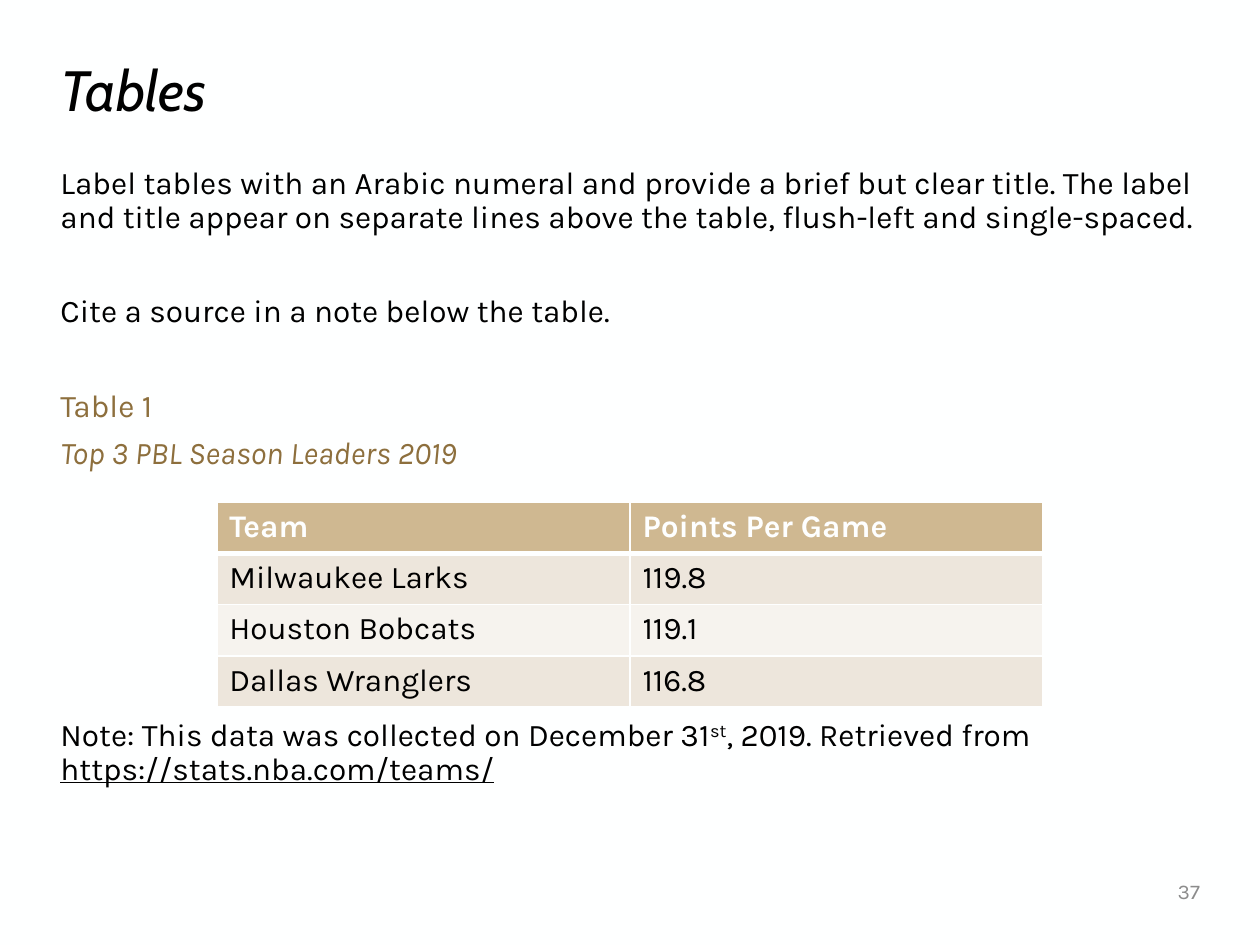
from lxml.etree import SubElement
from pptx import Presentation
from pptx.dml.color import RGBColor
from pptx.enum.text import MSO_ANCHOR, PP_ALIGN
from pptx.oxml.ns import qn
from pptx.util import Cm, Pt

INK = {"back": "FEFFFF", "text": "000000", "gold": "8D6F3D", "grey": "8C8C8C",
       "head": "CFB891", "odd": "EDE6DC", "even": "F6F3EE"}

TITLE = [(0, [("Tables", {"font": "Cabin", "size": 32.4, "italic": True})])]
BODY = [
    (0, [("Label tables with an Arabic numeral and provide a brief but clear title. "
          "The label and title appear on separate lines above the table, "
          "flush-left and single-spaced.", {})]),
    (34.4, [("Cite a source in a note below the table.", {})]),
    (34.4, [("Table 1", {"ink": "gold"})]),
    (7.5, [("Top 3 PBL Season Leaders 2019", {"ink": "gold", "italic": True})]),
    (142, [("Note: This data was collected on December 31", {}),
           ("st", {"base": 30}),
           (", 2019. Retrieved from ", {}),
           ("https://stats.nba.com/teams/", {"line": True})]),
]
PAGE = [(0, [("37", {"size": 12, "ink": "grey"})])]
TEAMS = [
    ("Team", "Points Per Game"),
    ("Milwaukee Larks", "119.8"),
    ("Houston Bobcats", "119.1"),
    ("Dallas Wranglers", "116.8"),
]
LEFT, WIDE = 0.97, 23.47


def color(name):
    return RGBColor.from_string(INK[name])


def add_run(para, text, font="Karla", size=18, ink="text",
            italic=False, bold=False, line=False, base=0):
    run = para.add_run()
    run.text = text
    face = run.font
    face.name, face.size = font, Pt(size)
    face.italic, face.bold, face.underline = italic, bold, line
    face.color.rgb = color(ink)
    if base:
        face._element.set("baseline", str(base * 1000))


def add_text(slide, place, paras, anchor=MSO_ANCHOR.MIDDLE, align=PP_ALIGN.LEFT):
    frame = slide.shapes.add_textbox(*map(Cm, place)).text_frame
    frame.word_wrap = True
    frame.vertical_anchor = anchor
    for i, (gap, runs) in enumerate(paras):
        para = frame.add_paragraph() if i else frame.paragraphs[0]
        para.alignment = align
        para.line_spacing = 0.9
        para.space_before = Pt(gap)
        for text, style in runs:
            add_run(para, text, **style)


def add_edges(cell, head, below):
    props = cell._tc.get_or_add_tcPr()
    sides = {"lnL": 1, "lnR": 1, "lnT": 3 if below else 1, "lnB": 3 if head else 1}
    for i, (side, width) in enumerate(sides.items()):
        edge = SubElement(props, qn(f"a:{side}"), w=str(Pt(width)))
        fill = SubElement(edge, qn("a:solidFill"))
        SubElement(fill, qn("a:srgbClr"), val=INK["back"])
        props.insert(i, edge)


def add_grid(slide):
    high = 1.03
    place = (4.37, 10.13, 16.66, high * len(TEAMS))
    table = slide.shapes.add_table(len(TEAMS), 2, *map(Cm, place)).table
    for r, row in enumerate(TEAMS):
        table.rows[r].height = Cm(high)
        shade = "head" if r == 0 else "odd" if r % 2 else "even"
        for c, text in enumerate(row):
            cell = table.cell(r, c)
            cell.fill.solid()
            cell.fill.fore_color.rgb = color(shade)
            add_edges(cell, r == 0, r == 1)
            add_run(cell.text_frame.paragraphs[0], text, bold=r == 0,
                    ink="text" if r else "back")


def main():
    deck = Presentation()
    deck.slide_width, deck.slide_height = Cm(25.4), Cm(19.05)
    slide = deck.slides.add_slide(deck.slide_layouts[6])
    slide.background.fill.solid()
    slide.background.fill.fore_color.rgb = color("back")
    add_text(slide, (21.39, 17.48, 3.05, 1.02), PAGE, align=PP_ALIGN.RIGHT)
    add_text(slide, (LEFT, 3.25, WIDE, 13.74), BODY, MSO_ANCHOR.TOP)
    add_text(slide, (LEFT, 1.07, WIDE, 1.63), TITLE)
    add_grid(slide)
    deck.save("out.pptx")


if __name__ == "__main__":
    main()
